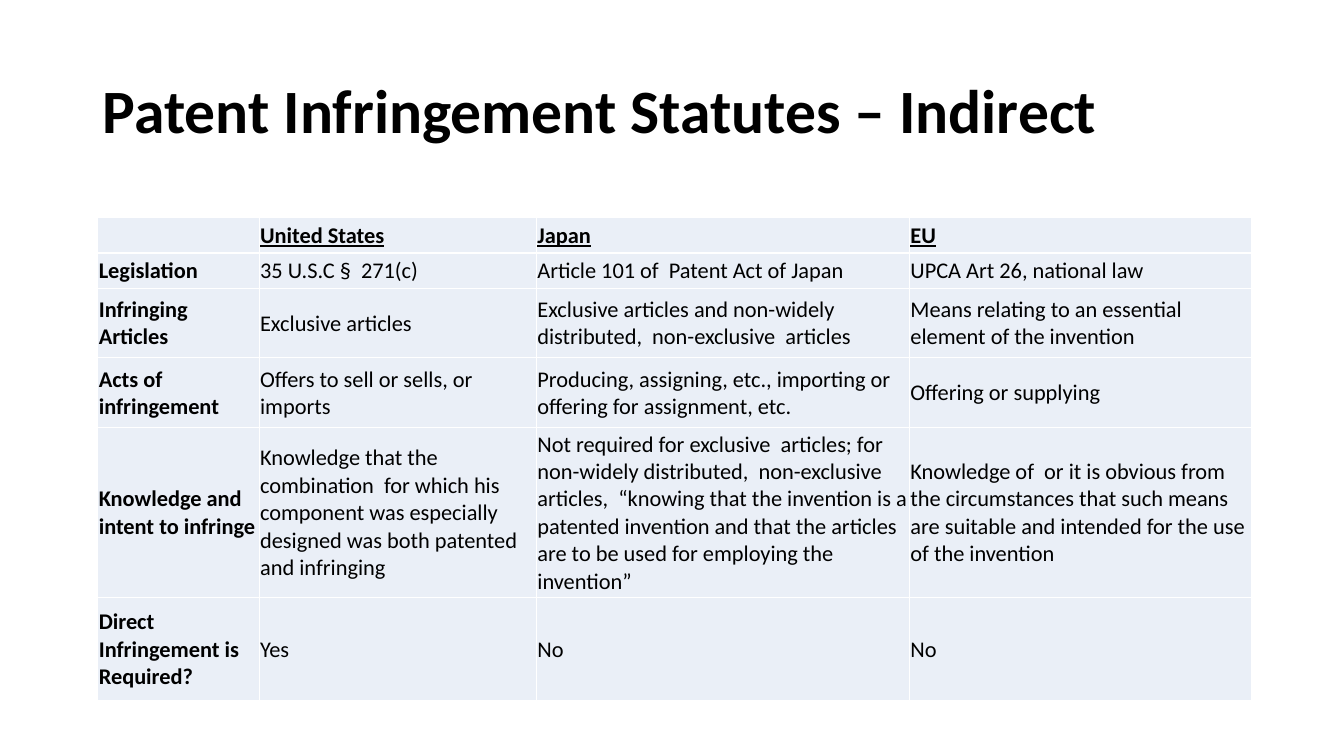
from dataclasses import dataclass

from lxml import etree
from pptx import Presentation
from pptx import util as u
from pptx.dml.color import RGBColor
from pptx.enum import text
from pptx.oxml.ns import qn

PX = 9144  # EMU; 100 px to the inch
FONT = "Calibri"
BLACK = RGBColor(0x00, 0x00, 0x00)
WHITE = RGBColor(0xFF, 0xFF, 0xFF)
PALE_BLUE = RGBColor(0xEA, 0xEF, 0xF7)


@dataclass(frozen=True)
class Topic:
    """One row of the comparison, with its height in px."""
    height: int
    name: str
    united_states: str
    japan: str
    eu: str

    def texts(self) -> tuple[str, ...]:
        return self.name, self.united_states, self.japan, self.eu


COLUMN_WIDTHS = (160, 275, 370, 339)
TOPICS = (
    Topic(35, "", "United States", "Japan", "EU"),
    Topic(35, "Legislation", "35 U.S.C §  271(c)",
          "Article 101 of  Patent Act of Japan", "UPCA Art 26, national law"),
    Topic(69, "Infringing Articles", "Exclusive articles",
          "Exclusive articles and non-widely distributed,  non-exclusive  articles",
          "Means relating to an essential element of the invention"),
    Topic(69, "Acts of infringement", "Offers to sell or sells, or imports",
          "Producing, assigning, etc., importing or offering for assignment, etc.",
          "Offering or supplying"),
    Topic(169, "Knowledge and  intent to infringe",
          "Knowledge that the combination  for which his  component was especially "
          "designed was both patented and infringing",
          "Not required for exclusive  articles; for non-widely distributed,  "
          "non-exclusive articles,  “knowing that the invention is a patented invention "
          "and that the articles are to be used for employing the invention”",
          "Knowledge of  or it is obvious from the circumstances that such means are "
          "suitable and intended for the use of the invention"),
    Topic(102, "Direct  Infringement is Required?", "Yes", "No", "No"),
)


def px(length: int) -> u.Emu:
    return u.Emu(length * PX)


def format_runs(paragraph, size: int, bold: bool, underline: bool = False) -> None:
    for span in paragraph.runs:
        span.font.name = FONT
        span.font.size = u.Pt(size)
        span.font.bold = bold
        span.font.underline = underline
        span.font.color.rgb = BLACK


def add_borders(cell) -> None:
    properties = cell._tc.get_or_add_tcPr()
    for side in ("lnL", "lnR", "lnT", "lnB"):
        line = etree.SubElement(properties, qn(f"a:{side}"), w=str(u.Pt(1)))
        fill = etree.SubElement(line, qn("a:solidFill"))
        etree.SubElement(fill, qn("a:srgbClr"), val=str(WHITE))


def fill_cell(cell, words: str, bold: bool, underline: bool) -> None:
    cell.margin_left = cell.margin_right = cell.margin_top = px(1)
    cell.margin_bottom = 0
    cell.vertical_anchor = text.MSO_ANCHOR.MIDDLE
    add_borders(cell)
    cell.fill.solid()
    cell.fill.fore_color.rgb = PALE_BLUE
    cell.text_frame.text = words
    format_runs(cell.text_frame.paragraphs[0], 16, bold, underline)


def set_title(title, words: str) -> None:
    title.left, title.top, title.width, title.height = map(px, (92, 40, 1150, 145))
    frame = title.text_frame
    frame.text = words
    frame.word_wrap = True
    frame.auto_size = text.MSO_AUTO_SIZE.NONE
    frame.vertical_anchor = text.MSO_ANCHOR.MIDDLE
    paragraph = frame.paragraphs[0]
    paragraph.alignment = text.PP_ALIGN.LEFT
    paragraph.line_spacing = 0.9
    format_runs(paragraph, 44, bold=True)


def add_comparison(page) -> None:
    height = sum(topic.height for topic in TOPICS)
    table = page.shapes.add_table(
        len(TOPICS), len(COLUMN_WIDTHS),
        px(97), px(216), px(sum(COLUMN_WIDTHS)), px(height)).table
    for column, width in zip(table.columns, COLUMN_WIDTHS):
        column.width = px(width)
    for r, topic in enumerate(TOPICS):
        table.rows[r].height = px(topic.height)
        for c, words in enumerate(topic.texts()):
            fill_cell(table.cell(r, c), words, bold=r == 0 or c == 0, underline=r == 0)


def main() -> None:
    deck = Presentation()
    deck.slide_width, deck.slide_height = px(1333), px(750)
    page = deck.slides.add_slide(deck.slide_layouts.get_by_name("Title Only"))
    set_title(page.shapes.title, "Patent Infringement Statutes – Indirect")
    add_comparison(page)
    deck.save("out.pptx")


if __name__ == "__main__":
    main()
